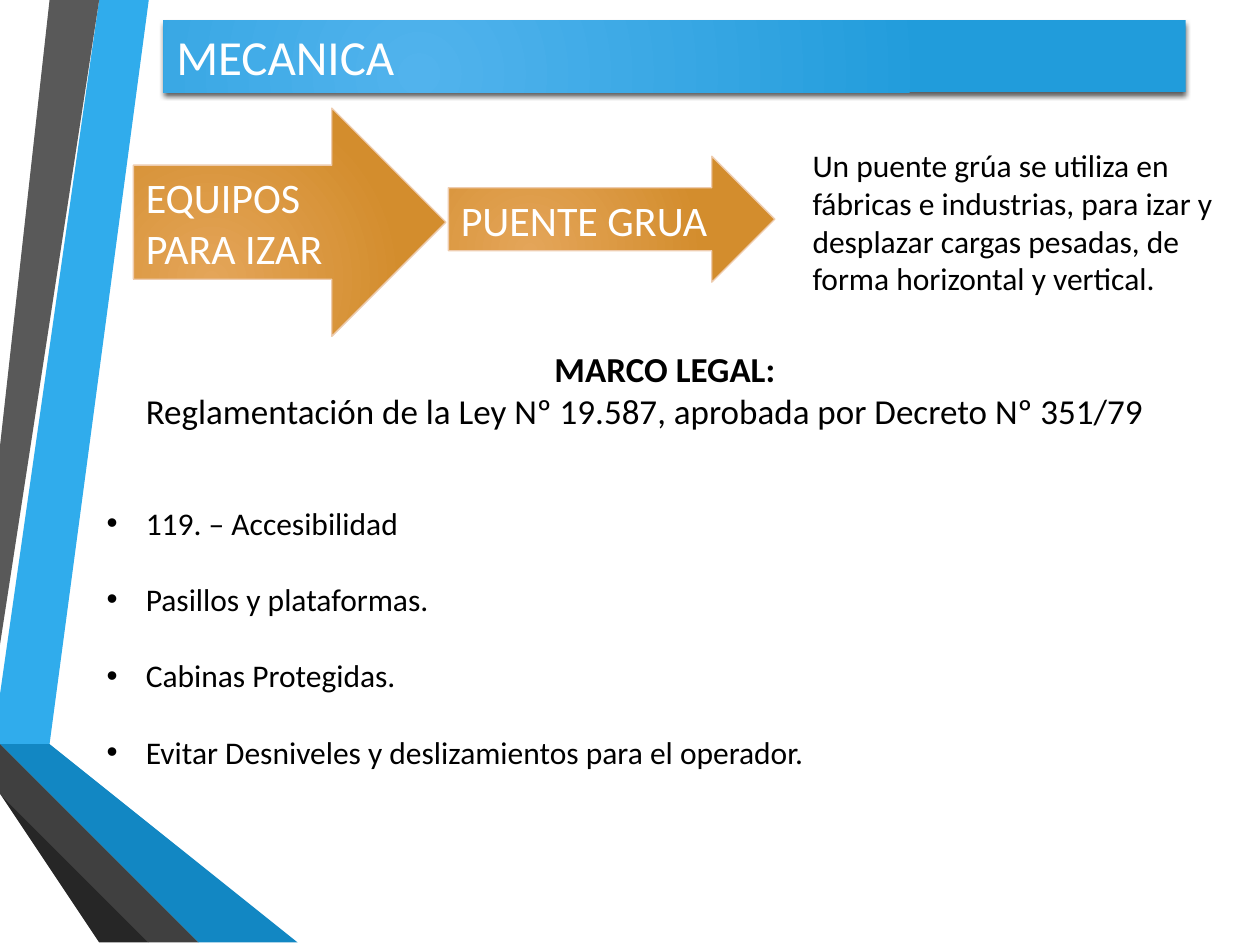
import lxml.etree
import pptx
import pptx.util
import pptx.dml.color
import pptx.enum.shapes
import pptx.enum.text
import pptx.oxml.ns

Cm, Pt = pptx.util.Cm, pptx.util.Pt
qn = pptx.oxml.ns.qn
ALIGN = pptx.enum.text.PP_ALIGN
ANCHOR = pptx.enum.text.MSO_ANCHOR
FONT = "Calibri"

COLORS = {
    "white": "FFFFFF", "black": "000000",
    "sky": "30ACEC", "blue": "1287C3", "navy": "0C5A82",
    "gray": "595959", "dark": "404040", "coal": "262626",
    "bar in": "51B3ED", "bar out": "219CDB",
    "gold in": "E4A559", "gold out": "D38D2D", "gold edge": "EECCAF",
}

# Content: boxes are left, top, width, height in cm
TITLE = "MECANICA"
TITLE_BOX = (3.3, 0.41, 20.6, 1.45)
ARROWS = [
    ("EQUIPOS PARA IZAR", (2.69, 2.18, 6.3, 4.6)),
    ("PUENTE GRUA", (9.04, 3.15, 6.58, 2.54)),
]
USE = ("Un puente grúa se utiliza en fábricas e industrias, para izar "
       "y desplazar cargas pesadas, de forma horizontal y vertical.")
USE_BOX = (16.13, 2.82, 9.27, 3.33)
LEGAL = [
    "MARCO LEGAL: ",
    "Reglamentación de la Ley Nº 19.587, aprobada por Decreto Nº 351/79",
]
LEGAL_BOX = (2.69, 6.88, 21.59, 1.96)
RULES = [
    "119. – Accesibilidad",
    "Pasillos y plataformas.",
    "Cabinas Protegidas.",
    "Evitar Desniveles y deslizamientos para el operador.",
]
RULES_BOX = (1.9, 10.03, 23.5, 5.64)

# Side ribbons: colour and corner points in cm
RIBBONS = [
    ("sky", [(0, 13.82), (0, 14.6), (0.56, 14.71), (2.97, 0), (2.26, 0)]),
    ("gray", [(2.11, 0), (1.4, 0), (0, 8.53), (0, 12.85)]),
    ("coal", [(0, 15.72), (0, 15.77), (2.36, 19.05), (2.51, 19.05)]),
    ("navy", [(0, 14.71), (0, 14.73), (3.96, 19.05), (4.14, 19.05)]),
    ("blue", [(0, 14.71), (4.14, 19.05), (5.92, 19.05), (0.56, 14.71),
              (0, 14.6)]),
    ("dark", [(0, 15.72), (2.51, 19.05), (3.84, 19.05), (0, 14.88)]),
]


def rgb(name):
    return pptx.dml.color.RGBColor.from_string(COLORS[name])


def place(shape, box):
    shape.left, shape.top, shape.width, shape.height = map(Cm, box)


def write(shape, lines, size, color, anchor=ANCHOR.TOP):
    frame = shape.text_frame
    frame.text = "\n".join(lines)
    frame.word_wrap = True
    frame.auto_size = pptx.enum.text.MSO_AUTO_SIZE.NONE
    frame.vertical_anchor = anchor
    for para in frame.paragraphs:
        para.alignment = ALIGN.LEFT
        for run in para.runs:
            run.font.name, run.font.size = FONT, Pt(size)
            run.font.color.rgb = rgb(color)
    return frame.paragraphs


def glow(shape, inner, outer):
    """Fill with a radial gradient centred on the bottom edge."""
    shape.fill.gradient()
    for stop, name, pos in zip(shape.fill.gradient_stops, (inner, outer), (0, 1)):
        stop.color.rgb, stop.position = rgb(name), pos
    grad = shape._element.spPr.find(qn("a:gradFill"))
    grad.remove(grad.find(qn("a:lin")))
    ring = lxml.etree.SubElement(grad, qn("a:path"), path="circle")
    lxml.etree.SubElement(ring, qn("a:fillToRect"),
                          l="50000", t="100000", r="100000", b="50000")


def shade(shape):
    shape.shadow.inherit = False
    list_ = shape._element.spPr.find(qn("a:effectLst"))
    drop = lxml.etree.SubElement(
        list_, qn("a:outerShdw"), blurRad=str(Pt(3)), dist=str(Pt(2)),
        dir="5400000", algn="ctr", rotWithShape="0")
    tint = lxml.etree.SubElement(drop, qn("a:srgbClr"), val=COLORS["black"])
    lxml.etree.SubElement(tint, qn("a:alpha"), val="64000")


def bullet(para):
    props = para._p.get_or_add_pPr()
    props.set("marL", str(Cm(0.79)))
    props.set("indent", str(Cm(-0.79)))
    lxml.etree.SubElement(props, qn("a:buFont"), typeface="Arial")
    lxml.etree.SubElement(props, qn("a:buChar"), char="•")


def main():
    deck = pptx.Presentation()
    deck.slide_width, deck.slide_height = Cm(25.4), Cm(19.05)
    slide = deck.slides.add_slide(deck.slide_layouts[5])
    shapes = slide.shapes

    # Ribbons down the left side
    for color, points in RIBBONS:
        pen = shapes.build_freeform(*points[0], scale=Cm(1))
        pen.add_line_segments(points[1:], close=True)
        ribbon = pen.convert_to_shape()
        ribbon.fill.solid()
        ribbon.fill.fore_color.rgb = rgb(color)
        ribbon.line.fill.background()
        ribbon.shadow.inherit = False

    # Title bar
    title = shapes.title
    place(title, TITLE_BOX)
    glow(title, "bar in", "bar out")
    shade(title)
    write(title, [TITLE], 28, "white", ANCHOR.MIDDLE)

    # Arrows
    for text, box in ARROWS:
        arrow = shapes.add_shape(
            pptx.enum.shapes.MSO_SHAPE.RIGHT_ARROW, *map(Cm, box))
        glow(arrow, "gold in", "gold out")
        arrow.line.color.rgb = rgb("gold edge")
        arrow.line.width = Pt(0.75)
        arrow.shadow.inherit = False
        write(arrow, [text], 24, "white", ANCHOR.MIDDLE)

    # Use of the crane
    write(shapes.add_textbox(*map(Cm, USE_BOX)), [USE], 18, "black")

    # Legal frame
    head, law = write(shapes.add_textbox(*map(Cm, LEGAL_BOX)), LEGAL, 20, "black")
    head.alignment, law.alignment = ALIGN.CENTER, ALIGN.JUSTIFY
    head.runs[0].font.bold = True

    # Bulleted rules, one line apart
    for para in write(shapes.add_textbox(*map(Cm, RULES_BOX)), RULES, 18, "black"):
        para.space_after = Pt(22)
        bullet(para)

    deck.save("out.pptx")


if __name__ == "__main__":
    main()
